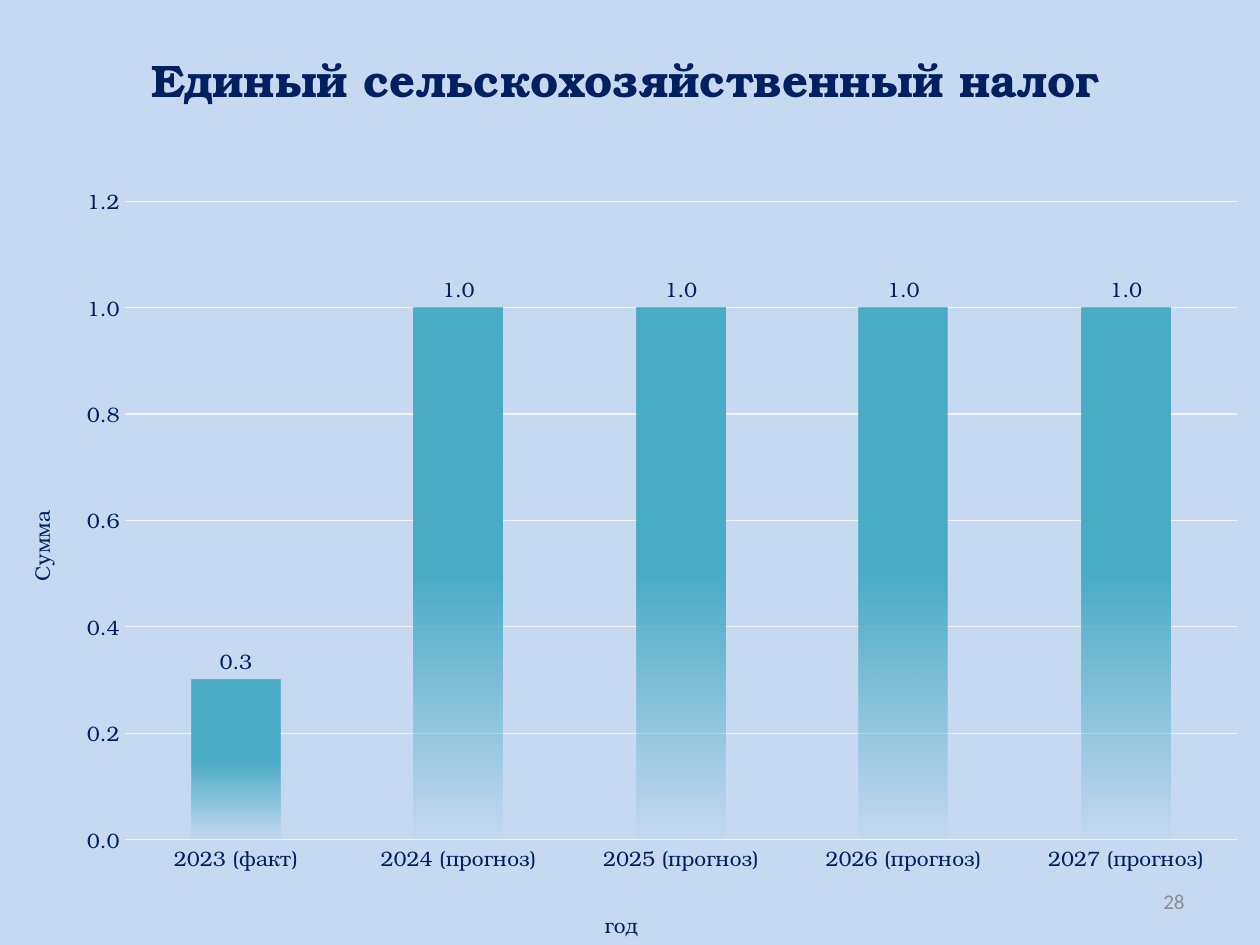
from dataclasses import dataclass

from pptx import Presentation
from pptx.chart.data import CategoryChartData as Data
from pptx.dml.color import RGBColor as RGB
from pptx.enum.chart import XL_CHART_TYPE as Kind
from pptx.enum.chart import XL_LABEL_POSITION as Spot
from pptx.enum.chart import XL_TICK_MARK as Tick
from pptx.enum.text import MSO_ANCHOR as Anchor
from pptx.enum.text import PP_ALIGN as Align
from pptx.oxml import parse_xml
from pptx.oxml.ns import nsdecls, qn
from pptx.oxml.xmlchemy import OxmlElement as Node
from pptx.util import Pt


@dataclass(frozen=True)
class Theme:
    back: RGB = RGB.from_string("C6D9F1")
    ink: RGB = RGB.from_string("002060")
    bar: RGB = RGB.from_string("4BACC6")
    grid: RGB = RGB.from_string("F2F2F2")
    gray: RGB = RGB.from_string("8C8C8C")
    serif: str = "TeX Gyre Bonum"
    sans: str = "Calibri"
    head: int = 26
    text: int = 12


LOOK = Theme()


def style(font, color=LOOK.ink, name=LOOK.serif, size=LOOK.text, bold=False):
    font.name, font.size, font.bold = name, Pt(size), bold
    font.color.rgb = color


def move(shape, left, top, width, height):
    shape.left, shape.top = Pt(left), Pt(top)
    shape.width, shape.height = Pt(width), Pt(height)


def write(shape, text, align, **font):
    frame = shape.text_frame
    frame.text = text
    frame.word_wrap = True
    frame.vertical_anchor = Anchor.MIDDLE
    para = frame.paragraphs[0]
    para.alignment = align
    style(para.runs[0].font, **font)


def place(node, index, inner=False, **box):
    """Give a chart part a manual layout in fractions of the chart."""
    for old in node.findall(qn("c:layout")):
        node.remove(old)
    tags = [("layoutTarget", "inner")] if inner else []
    tags += [(f"{key}Mode", "edge") for key in "xy"]
    tags += box.items()
    body = "".join(f'<c:{tag} val="{val}"/>' for tag, val in tags)
    node.insert(index, parse_xml(
        f'<c:layout {nsdecls("c")}><c:manualLayout>{body}'
        "</c:manualLayout></c:layout>"))


def set_axis(axis, title, x, y):
    axis.major_tick_mark = axis.minor_tick_mark = Tick.NONE
    axis.format.line.fill.background()
    style(axis.tick_labels.font)
    frame = axis.axis_title.text_frame
    frame.text = title
    style(frame.paragraphs[0].runs[0].font)
    place(axis.axis_title._element, 1, x=x, y=y)


def fade(ser):
    """Solid upper half, fading out towards the foot of the bar."""
    fill = ser.format.fill
    fill.gradient()
    fill.gradient_angle = 270
    for stop, pos in zip(fill.gradient_stops, (0.5, 1)):
        stop.position = pos
        stop.color.rgb = LOOK.bar
    alpha = Node("a:alpha")
    alpha.set("val", "0")
    ser._element.xpath(".//a:gs[last()]/a:srgbClr")[0].append(alpha)


def add_bars(slide):
    data = Data(number_format="0.0")
    data.categories = ["2023 (факт)"] + [
        f"{year} (прогноз)" for year in range(2024, 2028)]
    data.add_series("Series 1", [0.3, 1, 1, 1, 1])
    chart = slide.shapes.add_chart(
        Kind.COLUMN_CLUSTERED, Pt(-2.2), Pt(87.1), Pt(720), Pt(452.9),
        data).chart
    chart.has_title = chart.has_legend = False
    style(chart.font)
    place(chart._chartSpace.chart.plotArea, 0, inner=True,
          x=0.102, y=0.062, w=0.883, h=0.81)

    # Axes
    set_axis(chart.category_axis, "год", 0.48, 0.955)
    axis = chart.value_axis
    set_axis(axis, "Сумма", 0.02, 0.45)
    turn = axis.axis_title.text_frame._txBody.bodyPr
    turn.set("rot", "-5400000")
    turn.set("vert", "horz")
    axis.minimum_scale, axis.maximum_scale, axis.major_unit = 0, 1.2, 0.2
    axis.tick_labels.number_format = "0.0"
    axis.tick_labels.number_format_is_linked = False
    line = axis.major_gridlines.format.line
    line.color.rgb, line.width = LOOK.grid, Pt(0.75)

    # Columns and their values
    plot = chart.plots[0]
    plot.gap_width = 150
    plot.vary_by_categories = False
    fade(plot.series[0])
    labels = plot.series[0].data_labels
    labels.show_value = True
    labels.position = Spot.OUTSIDE_END
    labels.number_format = "0.0"
    labels.number_format_is_linked = False
    style(labels.font)


def main():
    deck = Presentation()
    deck.slide_width, deck.slide_height = Pt(720), Pt(540)
    slide = deck.slides.add_slide(deck.slide_layouts[5])
    fill = slide.background.fill
    fill.solid()
    fill.fore_color.rgb = LOOK.back

    # Title
    title = slide.shapes.title
    move(title, -2.2, 15.1, 720, 60.5)
    write(title, "Единый сельскохозяйственный налог", Align.CENTER,
          size=LOOK.head, bold=True)

    # Page number
    page = slide.shapes.add_textbox(Pt(516), Pt(500.5), Pt(168), Pt(28.75))
    write(page, "28", Align.RIGHT, color=LOOK.gray, name=LOOK.sans)

    # Chart
    add_bars(slide)
    deck.save("out.pptx")


if __name__ == "__main__":
    main()
